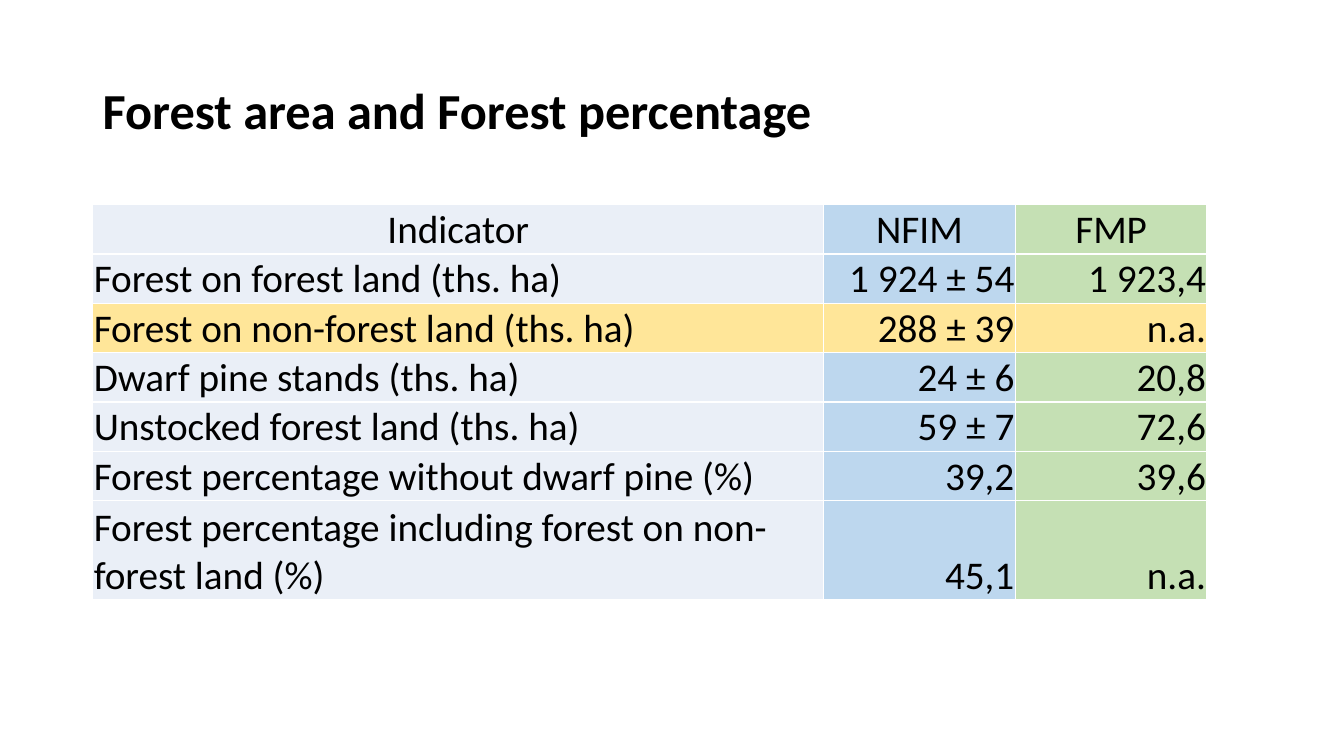
from lxml.etree import SubElement
from pptx import Presentation
from pptx.dml.color import RGBColor as RGB
from pptx.enum.text import MSO_ANCHOR as Anchor, PP_ALIGN as Align
from pptx.oxml.ns import qn
from pptx.util import Inches, Pt

COLORS = {
    "text": "000000",
    "border": "FFFFFF",
    "indicator": "EAEFF7",
    "nfim": "BDD7EE",
    "fmp": "C5E0B4",
    "highlight": "FFE699",
}
FONT = "Calibri"
COLUMNS = [("indicator", 7.25, Align.LEFT),
           ("nfim", 1.9, Align.RIGHT),
           ("fmp", 1.9, Align.RIGHT)]
LINE_HEIGHT = 0.49
HIGHLIGHT_ROW = 2
INDICATORS = [
    ("Indicator", "NFIM", "FMP"),
    ("Forest on forest land (ths. ha)", "1 924 ± 54", "1 923,4"),
    ("Forest on non-forest land (ths. ha)", "288 ± 39", "n.a."),
    ("Dwarf pine stands (ths. ha)", "24 ± 6", "20,8"),
    ("Unstocked forest land (ths. ha)", "59 ± 7", "72,6"),
    ("Forest percentage without dwarf pine (%)", "39,2", "39,6"),
    ("Forest percentage including forest on non-forest land (%)", "45,1", "n.a."),
]


def write(frame, text, size, bold=False, align=Align.LEFT, spacing=None):
    paragraph = frame.paragraphs[0]
    paragraph.alignment = align
    paragraph.line_spacing = spacing
    run = paragraph.add_run()
    run.text = text
    run.font.name = FONT
    run.font.size = Pt(size)
    run.font.bold = bold
    run.font.color.rgb = RGB.from_string(COLORS["text"])


def set_borders(cell):
    properties = cell._tc.get_or_add_tcPr()
    for position, side in enumerate(("lnL", "lnR", "lnT", "lnB")):
        line = properties.makeelement(qn(f"a:{side}"), {"w": str(Pt(1))})
        fill = SubElement(line, qn("a:solidFill"))
        SubElement(fill, qn("a:srgbClr"), val=COLORS["border"])
        properties.insert(position, line)


def add_title(slide, left, top, width, height):
    frame = slide.shapes.add_textbox(
        Inches(left), Inches(top), Inches(width), Inches(height)).text_frame
    frame.word_wrap = True
    frame.vertical_anchor = Anchor.MIDDLE
    write(frame, "Forest area and Forest percentage", 36, bold=True, spacing=0.9)


def add_indicator_table(slide, left, top):
    # The last indicator takes two lines
    heights = [LINE_HEIGHT] * (len(INDICATORS) - 1) + [2 * LINE_HEIGHT]
    width = sum(column_width for _, column_width, _ in COLUMNS)
    table = slide.shapes.add_table(
        len(INDICATORS), len(COLUMNS), Inches(left), Inches(top),
        Inches(width), Inches(sum(heights))).table
    table.horz_banding = False
    table.first_row = False

    for column, (_, column_width, _) in zip(table.columns, COLUMNS):
        column.width = Inches(column_width)

    for r, (values, height) in enumerate(zip(INDICATORS, heights)):
        table.rows[r].height = Inches(height)
        for c, (value, (color, _, align)) in enumerate(zip(values, COLUMNS)):
            cell = table.cell(r, c)
            cell.margin_left = cell.margin_right = cell.margin_top = Inches(0.01)
            cell.margin_bottom = 0
            cell.vertical_anchor = Anchor.BOTTOM
            cell.fill.solid()
            cell.fill.fore_color.rgb = RGB.from_string(
                COLORS["highlight" if r == HIGHLIGHT_ROW else color])
            set_borders(cell)
            write(cell.text_frame, value, 28,
                  align=Align.CENTER if r == 0 else align)


def main():
    deck = Presentation()
    deck.slide_width, deck.slide_height = Inches(13.33), Inches(7.5)
    slide = deck.slides.add_slide(deck.slide_layouts[6])
    # Heading above, comparison of both inventories below
    add_title(slide, 0.92, 0.4, 11.5, 1.45)
    add_indicator_table(slide, 0.92, 2.03)
    deck.save("out.pptx")


if __name__ == "__main__":
    main()
